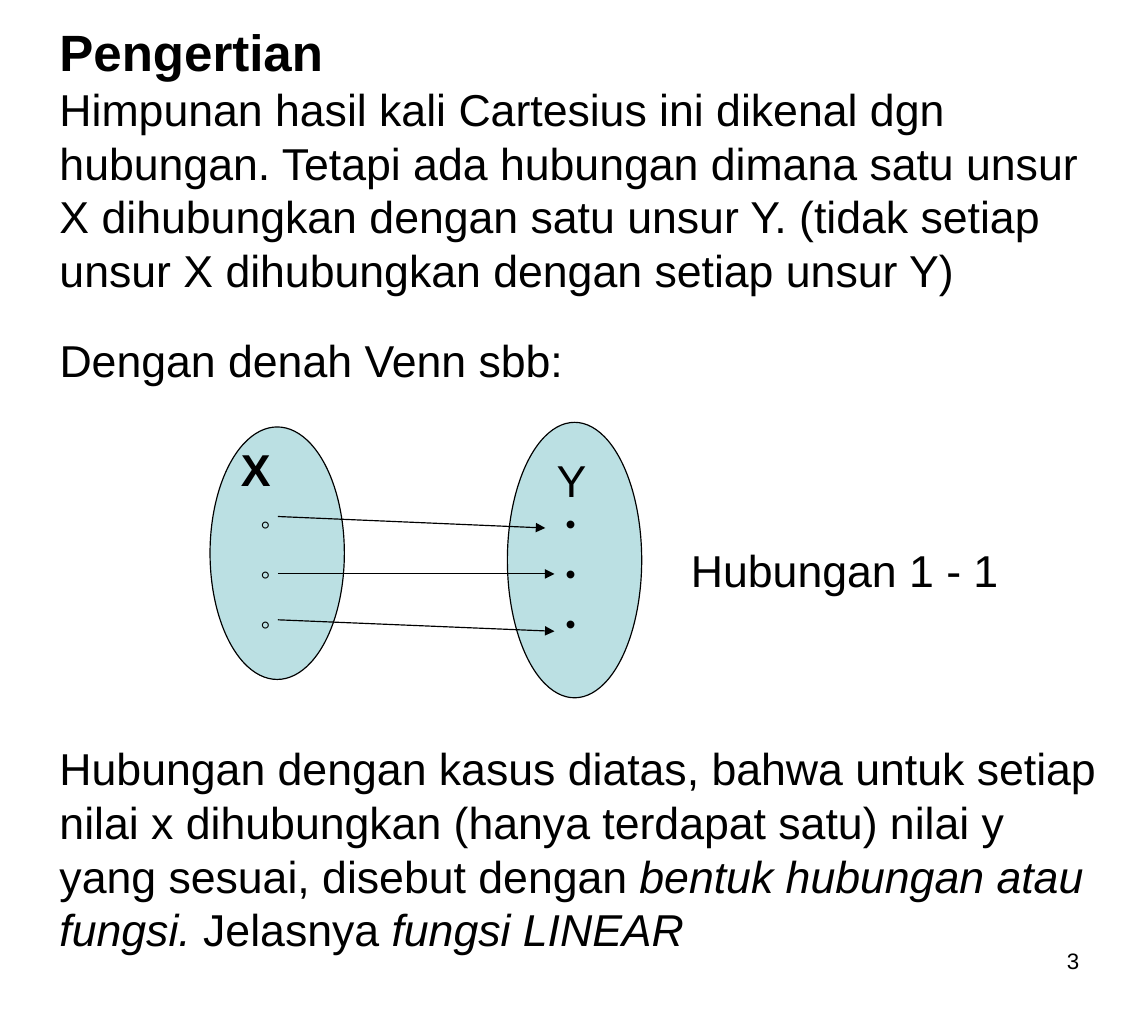
import dataclasses

import lxml.etree
import pptx
import pptx.dml.color
import pptx.enum.shapes
import pptx.enum.text
import pptx.oxml.ns
import pptx.shapes.shapetree
import pptx.util

EMU_PER_PX = 9144  # 100 px to the inch
BLACK = pptx.dml.color.RGBColor(0x00, 0x00, 0x00)
PALE_TEAL = pptx.dml.color.RGBColor(0xBB, 0xE0, 0xE3)
LINE_WIDTH = pptx.util.Pt(0.75)
FONT = "Arial"


@dataclasses.dataclass(frozen=True)
class Span:
    text: str
    italic: bool = False


@dataclasses.dataclass(frozen=True)
class Para:
    spans: tuple[Span, ...]
    size: int = 28
    bold: bool = False
    space_before: float = 0
    align: pptx.enum.text.PP_ALIGN = pptx.enum.text.PP_ALIGN.LEFT


@dataclasses.dataclass(frozen=True)
class TextBox:
    left: int
    top: int
    width: int
    height: int
    paras: tuple[Para, ...]


@dataclasses.dataclass(frozen=True)
class VennSet:
    left: int
    top: int
    width: int
    height: int


@dataclasses.dataclass(frozen=True)
class Arrow:
    start_x: int
    start_y: int
    end_x: int
    end_y: int


def plain(text: str, size: int = 28, bold: bool = False) -> Para:
    return Para((Span(text),), size, bold)


def elements(mark: str) -> tuple[Para, ...]:
    """Three marks, one under another, for the members of a set."""
    return tuple(Para((Span(mark),), 18, space_before=gap) for gap in (0, 9.7, 9.7))


VENN_SETS = (VennSet(183, 372, 117, 220), VennSet(442, 368, 117, 240))

ARROWS = (
    Arrow(242, 450, 475, 460),
    Arrow(242, 500, 483, 500),
    Arrow(242, 540, 483, 550),
)

TEXT_BOXES = (
    TextBox(42, 13, 917, 250, (
        plain("Pengertian", 32, bold=True),
        plain("Himpunan hasil kali Cartesius ini dikenal dgn hubungan. Tetapi ada "
              "hubungan dimana satu unsur X dihubungkan dengan satu unsur Y. "
              "(tidak setiap unsur X dihubungkan dengan setiap unsur Y)"),
    )),
    TextBox(42, 285, 925, 57, (plain("Dengan denah Venn sbb:"),)),
    TextBox(217, 436, 33, 130, elements("◦")),
    TextBox(483, 436, 33, 130, elements("•")),
    TextBox(200, 380, 83, 57, (plain("X", bold=True),)),
    TextBox(475, 390, 50, 57, (plain("Y"),)),
    TextBox(592, 468, 300, 57, (plain("Hubungan 1 - 1"),)),
    TextBox(42, 641, 933, 197, (
        Para((
            Span("Hubungan dengan kasus diatas, bahwa untuk setiap nilai x dihubungkan "
                 "(hanya terdapat satu) nilai y yang sesuai, disebut dengan "),
            Span("bentuk hubungan atau fungsi. ", italic=True),
            Span("Jelasnya "),
            Span("fungsi LINEAR", italic=True),
        )),
    )),
    TextBox(717, 820, 233, 62, (
        Para((Span("3"),), 14, align=pptx.enum.text.PP_ALIGN.RIGHT),
    )),
)


def px(length: int) -> pptx.util.Emu:
    return pptx.util.Emu(length * EMU_PER_PX)


def draw_venn_set(shapes: pptx.shapes.shapetree.SlideShapes, venn_set: VennSet) -> None:
    ellipse = shapes.add_shape(
        pptx.enum.shapes.MSO_SHAPE.OVAL,
        px(venn_set.left), px(venn_set.top), px(venn_set.width), px(venn_set.height),
    )
    ellipse.shadow.inherit = False
    ellipse.fill.solid()
    ellipse.fill.fore_color.rgb = PALE_TEAL
    ellipse.line.color.rgb = BLACK
    ellipse.line.width = LINE_WIDTH


def draw_arrow(shapes: pptx.shapes.shapetree.SlideShapes, arrow: Arrow) -> None:
    connector = shapes.add_connector(
        pptx.enum.shapes.MSO_CONNECTOR.STRAIGHT,
        px(arrow.start_x), px(arrow.start_y), px(arrow.end_x), px(arrow.end_y),
    )
    connector.line.color.rgb = BLACK
    connector.line.width = LINE_WIDTH
    line = connector.line._get_or_add_ln()
    lxml.etree.SubElement(line, pptx.oxml.ns.qn("a:tailEnd"), type="triangle")
    properties = connector._element.spPr
    lxml.etree.SubElement(properties, pptx.oxml.ns.qn("a:effectLst"))


def draw_text_box(shapes: pptx.shapes.shapetree.SlideShapes, text_box: TextBox) -> None:
    box = shapes.add_textbox(
        px(text_box.left), px(text_box.top), px(text_box.width), px(text_box.height)
    )
    frame = box.text_frame
    frame.word_wrap = True
    for index, para in enumerate(text_box.paras):
        paragraph = frame.add_paragraph() if index else frame.paragraphs[0]
        paragraph.alignment = para.align
        paragraph.space_before = pptx.util.Pt(para.space_before)
        paragraph.font.name = FONT
        paragraph.font.size = pptx.util.Pt(para.size)
        paragraph.font.bold = para.bold
        paragraph.font.color.rgb = BLACK
        for span in para.spans:
            run = paragraph.add_run()
            run.text = span.text
            if span.italic:
                run.font.italic = True


def main() -> None:
    deck = pptx.Presentation()
    deck.slide_width = px(1000)
    deck.slide_height = px(900)
    page = deck.slides.add_slide(deck.slide_layouts[6])
    for venn_set in VENN_SETS:
        draw_venn_set(page.shapes, venn_set)
    for arrow in ARROWS:
        draw_arrow(page.shapes, arrow)
    for text_box in TEXT_BOXES:
        draw_text_box(page.shapes, text_box)
    deck.save("out.pptx")


if __name__ == "__main__":
    main()
